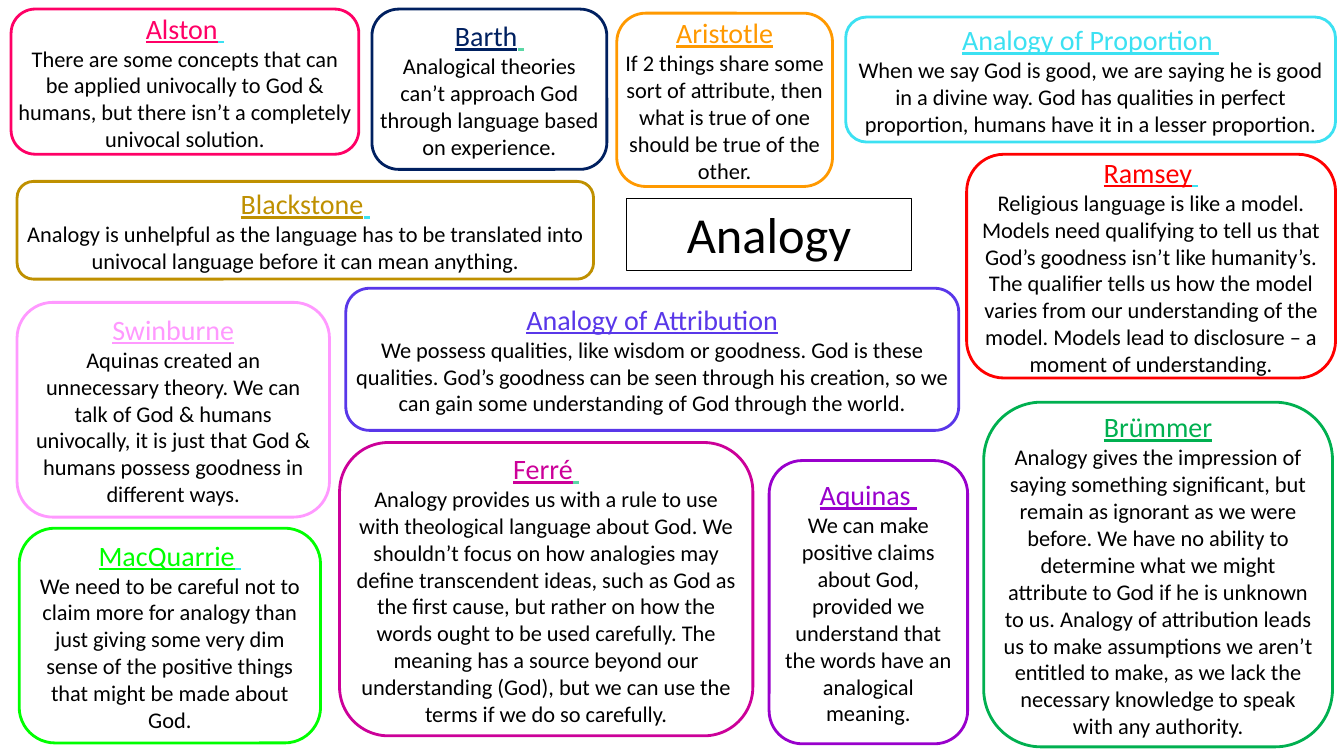
from dataclasses import dataclass

from pptx import Presentation
from pptx.dml.color import RGBColor
from pptx.enum import shapes, text
from pptx.util import Pt


@dataclass(frozen=True)
class Theme:
    font: str = "Calibri"
    title_size: int = 36
    heading_size: int = 20
    body_size: int = 16
    title_line: float = 0.75
    card_line: float = 2
    black: str = "000000"
    orange: str = "FF9900"
    purple: str = "9900CC"
    navy: str = "002060"
    mint: str = "5BD7A5"
    indigo: str = "5937E9"
    cyan: str = "3CE1F2"
    green: str = "00B050"
    pink: str = "FF99FF"
    rose: str = "FF0066"
    red: str = "FF0000"
    lime: str = "00FF00"
    gold: str = "BF9000"
    magenta: str = "CC0099"


THEME = Theme()

# Left, top, width, height; colour; heading; colour of the space after it; body
CARDS = [
    ((440.6, 9.4, 154.1, 123.8), THEME.orange, "Aristotle", None,
     "If 2 things share some sort of attribute, then what is true of one "
     "should be true of the other."),
    ((549.4, 329, 141.8, 202.3), THEME.purple, "Aquinas", THEME.purple,
     "We can make positive claims about God, provided we understand that "
     "the words have an analogical meaning."),
    ((265.7, 6.5, 167.8, 114.5), THEME.navy, "Barth", THEME.mint,
     "Analogical theories can’t approach God through language based on "
     "experience."),
    ((247, 205.9, 437.8, 101.5), THEME.indigo, "Analogy of Attribution", None,
     "We possess qualities, like wisdom or goodness. God is these qualities. "
     "God’s goodness can be seen through his creation, so we can gain some "
     "understanding of God through the world."),
    ((604.1, 12.2, 349.9, 89.3), THEME.cyan, "Analogy of Proportion", THEME.cyan,
     "When we say God is good, we are saying he is good in a divine way. God "
     "has qualities in perfect proportion, humans have it in a lesser "
     "proportion."),
    ((702.7, 287.3, 249.1, 246.2), THEME.green, "Brümmer", None,
     "Analogy gives the impression of saying something significant, but "
     "remain as ignorant as we were before. We have no ability to determine "
     "what we might attribute to God if he is unknown to us. Analogy of "
     "attribution leads us to make assumptions we aren’t entitled to make, "
     "as we lack the necessary knowledge to speak with any authority."),
    ((12.2, 216, 223.2, 153.4), THEME.pink, "Swinburne", None,
     "Aquinas created an unnecessary theory. We can talk of God & humans "
     "univocally, it is just that God & humans possess goodness in different "
     "ways."),
    ((7.9, 6.5, 248.4, 103.7), THEME.rose, "Alston", THEME.cyan,
     "There are some concepts that can be applied univocally to God & "
     "humans, but there isn’t a completely univocal solution."),
    ((690.5, 110.2, 263.5, 159.8), THEME.red, "Ramsey", THEME.cyan,
     "Religious language is like a model. Models need qualifying to tell us "
     "that God’s goodness isn’t like humanity’s. The qualifier tells us how "
     "the model varies from our understanding of the model. Models lead to "
     "disclosure – a moment of understanding."),
    ((13.7, 377.3, 215.3, 153.4), THEME.lime, "MacQuarrie", THEME.cyan,
     "We need to be careful not to claim more for analogy than just giving "
     "some very dim sense of the positive things that might be made about "
     "God."),
    ((12.2, 129.6, 411.8, 69.8), THEME.gold, "Blackstone", THEME.cyan,
     "Analogy is unhelpful as the language has to be translated into "
     "univocal language before it can mean anything."),
    ((242.6, 316.1, 295.2, 209.5), THEME.magenta, "Ferré", THEME.mint,
     "Analogy provides us with a rule to use with theological language about "
     "God. We shouldn’t focus on how analogies may define transcendent "
     "ideas, such as God as the first cause, but rather on how the words "
     "ought to be used carefully. The meaning has a source beyond our "
     "understanding (God), but we can use the terms if we do so carefully."),
]


def add_text(p, words, *, size, color=THEME.black, underline=False):
    p.alignment = text.PP_ALIGN.CENTER
    r = p.add_run()
    r.text = words
    r.font.name = THEME.font
    r.font.size = Pt(size)
    r.font.underline = underline
    r.font.color.rgb = RGBColor.from_string(color)


def add_outline(s, kind, box, color, width):
    """Add an unfilled shape with a coloured border."""
    sp = s.shapes.add_shape(kind, *map(Pt, box))
    sp.shadow.inherit = False
    sp.fill.background()
    sp.line.color.rgb = RGBColor.from_string(color)
    sp.line.width = Pt(width)
    sp.text_frame.word_wrap = True
    return sp


def add_title(s, words, box):
    sp = add_outline(s, shapes.MSO_SHAPE.RECTANGLE, box, THEME.black,
                     THEME.title_line)
    tf = sp.text_frame
    tf.vertical_anchor = text.MSO_ANCHOR.TOP
    tf.auto_size = text.MSO_AUTO_SIZE.SHAPE_TO_FIT_TEXT
    add_text(tf.paragraphs[0], words, size=THEME.title_size)


def add_card(s, box, color, heading, space_color, body):
    sp = add_outline(s, shapes.MSO_SHAPE.ROUNDED_RECTANGLE, box, color,
                     THEME.card_line)
    tf = sp.text_frame
    tf.vertical_anchor = text.MSO_ANCHOR.MIDDLE
    tf.margin_left = tf.margin_top = tf.margin_right = tf.margin_bottom = 0
    p = tf.paragraphs[0]
    add_text(p, heading, size=THEME.heading_size, color=color, underline=True)
    if space_color:
        add_text(p, " ", size=THEME.heading_size, color=space_color,
                 underline=True)
    add_text(tf.add_paragraph(), body, size=THEME.body_size)


def main():
    prs = Presentation()
    prs.slide_width, prs.slide_height = Pt(960), Pt(540)
    s = prs.slides.add_slide(prs.slide_layouts[6])
    add_title(s, "Analogy", (447.8, 141.8, 203, 51.1))
    for card in CARDS:
        add_card(s, *card)
    prs.save("out.pptx")


if __name__ == "__main__":
    main()
